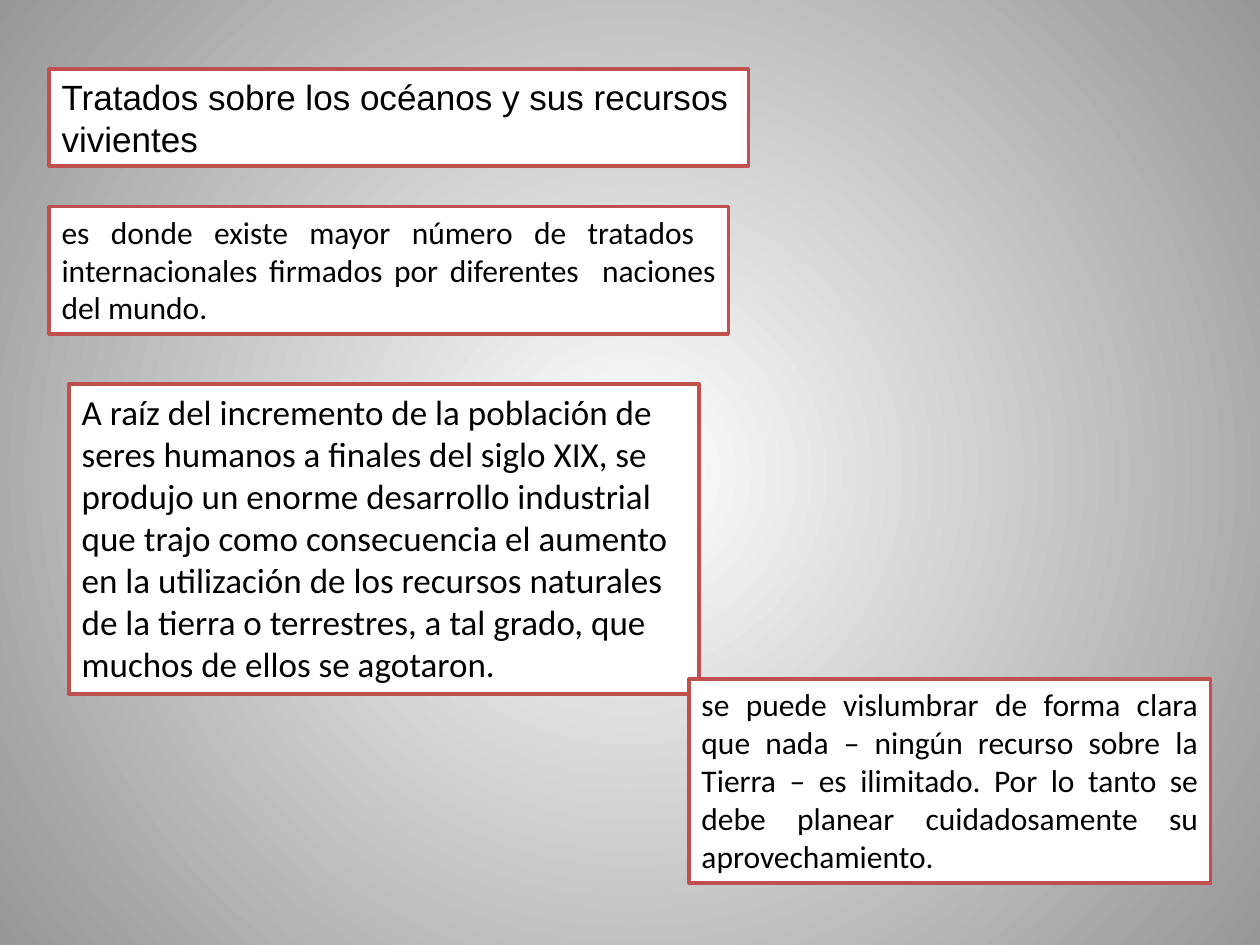
import pptx
import pptx.dml.color
import pptx.enum.shapes
import pptx.enum.text
import pptx.oxml
import pptx.oxml.ns
import pptx.util

Pt = pptx.util.Pt
ALIGN = pptx.enum.text.PP_ALIGN


def color(hex_text):
    return pptx.dml.color.RGBColor.from_string(hex_text)


def radial_background(s, center, edge):
    """Fill the slide with a circular gradient from its middle."""
    fill = s.background.fill
    fill.gradient()
    for stop, hex_text in zip(fill.gradient_stops, (center, edge)):
        stop.color.rgb = color(hex_text)
    grad = s.element.find(".//" + pptx.oxml.ns.qn("a:gradFill"))
    circle = pptx.oxml.parse_xml(
        f'<a:path {pptx.oxml.ns.nsdecls("a")} path="circle">'
        '<a:fillToRect l="50000" t="50000" r="50000" b="50000"/></a:path>')
    grad.replace(grad.find(pptx.oxml.ns.qn("a:lin")), circle)


def text_card(s, box, text, size, font="Calibri", align=ALIGN.LEFT):
    """Place a white card with a red border and one paragraph in box."""
    sp = s.shapes.add_shape(pptx.enum.shapes.MSO_SHAPE.RECTANGLE,
                            *(Pt(v) for v in box))
    sp.shadow.inherit = False
    sp.fill.solid()
    sp.fill.fore_color.rgb = color("FFFFFF")
    sp.line.color.rgb = color("C0504D")
    sp.line.width = Pt(2)
    tf = sp.text_frame
    tf.word_wrap = True
    tf.auto_size = pptx.enum.text.MSO_AUTO_SIZE.SHAPE_TO_FIT_TEXT
    tf.vertical_anchor = pptx.enum.text.MSO_ANCHOR.TOP
    p = tf.paragraphs[0]
    p.text = text
    p.alignment = align
    p.font.size = Pt(size)
    p.font.name = font
    p.font.color.rgb = color("000000")


def main():
    prs = pptx.Presentation()
    prs.slide_width, prs.slide_height = Pt(720), Pt(540)
    s = prs.slides.add_slide(prs.slide_layouts[6])
    radial_background(s, "FFFFFF", "979797")

    # Heading
    text_card(s, (28.1, 39.6, 399.6, 55.4),
              "Tratados sobre los océanos y sus recursos vivientes",
              20, font="Arial")
    # Number of treaties
    text_card(s, (28.1, 118.1, 388.1, 72.7),
              "es donde existe mayor número de tratados  internacionales "
              "firmados por diferentes  naciones del mundo.",
              18, align=ALIGN.JUSTIFY)
    # Causes
    text_card(s, (39.6, 219.6, 360, 177.1),
              "A raíz del incremento de la población de seres humanos a "
              "finales del siglo XIX, se produjo un enorme desarrollo "
              "industrial que trajo como consecuencia el aumento en la "
              "utilización de los recursos naturales de la tierra o "
              "terrestres, a tal grado, que muchos de ellos se agotaron.", 20)
    # Conclusion
    text_card(s, (393.8, 388.1, 298.1, 116.6),
              "se puede vislumbrar de forma clara que nada – ningún recurso "
              "sobre la Tierra – es ilimitado. Por lo tanto se debe planear "
              "cuidadosamente su aprovechamiento.",
              18, align=ALIGN.JUSTIFY)

    prs.save("out.pptx")


if __name__ == "__main__":
    main()
